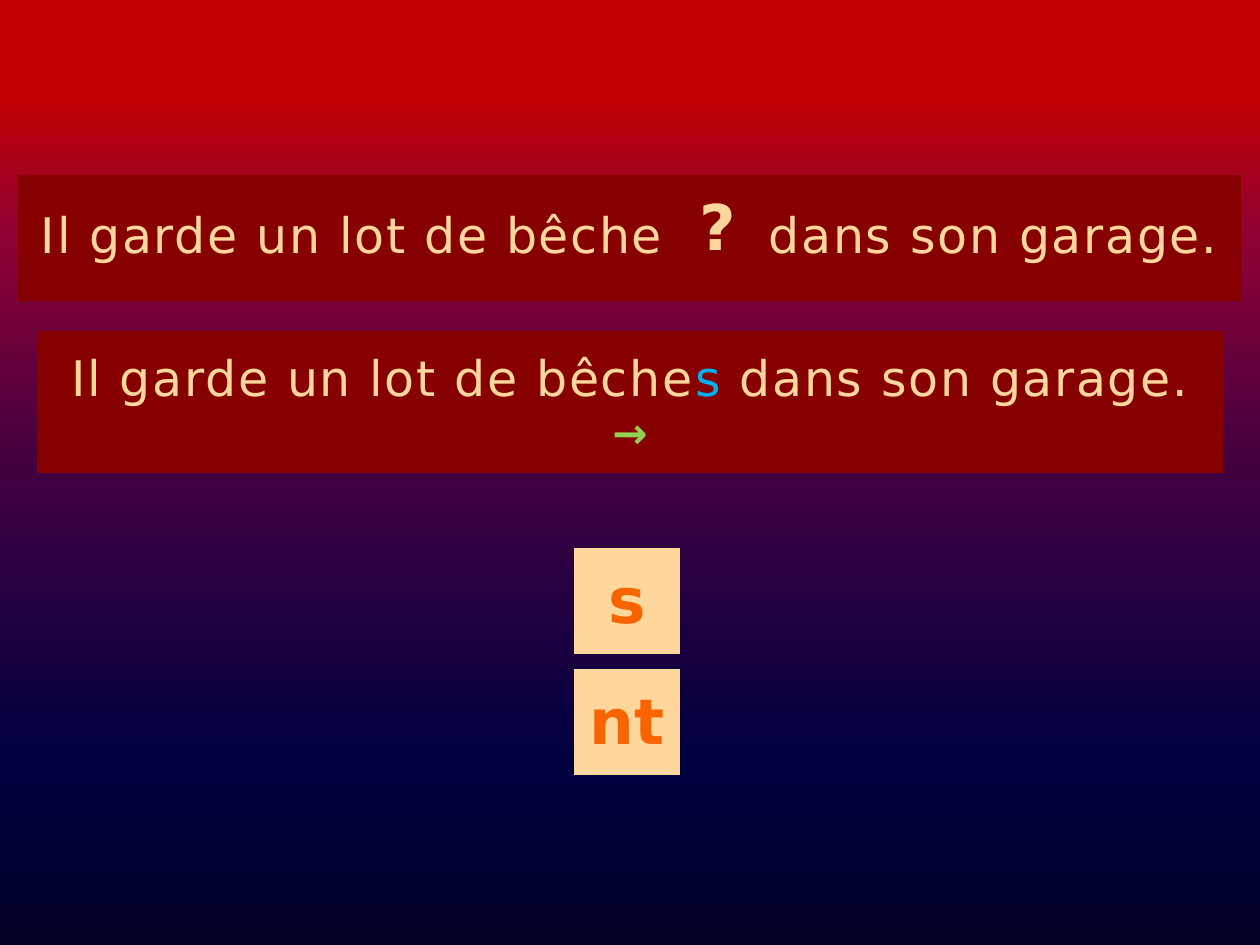
from dataclasses import dataclass
from lxml import etree
from pptx import Presentation, util as u
from pptx.dml.color import RGBColor
from pptx.enum import shapes, text
from pptx.oxml.ns import qn

FONT = "DejaVu Sans"
HUES = {"bar": "860000", "cream": "FFD79D", "orange": "F86400",
        "blue": "00B0F0", "green": "92D050"}
STOPS = {0: "000026", 20: "000040", 50: "400040", 75: "8F0134", 90: "C00000"}


@dataclass
class Box:
    """Place, fill and vertical insets of one block."""
    left: float
    top: float
    width: float
    height: float
    hue: str = "bar"
    above: float = 0.04
    below: float = 0.08


def block(slide, box: Box):
    """Draw a flat block and return it."""
    shape = slide.shapes.add_shape(
        shapes.MSO_SHAPE.ACTION_BUTTON_CUSTOM,
        *map(u.Inches, (box.left, box.top, box.width, box.height)))
    shape.shadow.inherit = False
    shape.line.fill.background()
    shape.fill.solid()
    shape.fill.fore_color.rgb = RGBColor.from_string(HUES[box.hue])
    frame = shape.text_frame
    frame.word_wrap = False
    frame.vertical_anchor = text.MSO_ANCHOR.MIDDLE
    frame.margin_left = frame.margin_right = u.Inches(0.1)
    frame.margin_top, frame.margin_bottom = u.Inches(box.above), u.Inches(box.below)
    frame.paragraphs[0].alignment = text.PP_ALIGN.CENTER
    return shape


def write(para, words: str, size: int = 28, hue: str = "cream",
          bold: bool = False, space: float = 0) -> None:
    """Add one formatted run to a paragraph."""
    run = para.add_run()
    run.text = words
    font = run.font
    font.name, font.size, font.bold = FONT, u.Pt(size), bold
    font.color.rgb = RGBColor.from_string(HUES[hue])
    if space:
        run._r.get_or_add_rPr().set("spc", str(round(space * 100)))


def blend(shape) -> None:
    """Fill a shape with the upward colour blend."""
    shape.fill.gradient()
    shape.fill.gradient_angle = 90
    stops = shape._element.spPr.find(".//" + qn("a:gsLst"))
    for old in list(stops):
        stops.remove(old)
    for place, hue in STOPS.items():
        stop = etree.SubElement(stops, qn("a:gs"), pos=str(place * 1000))
        etree.SubElement(stop, qn("a:srgbClr"), val=hue)


def tile(slide, box: Box, words: str, hue: str) -> None:
    """Draw a block with one large bold mark."""
    para = block(slide, box).text_frame.paragraphs[0]
    write(para, words, size=36, hue=hue, bold=True)


def main() -> None:
    """Build the spelling slide."""
    deck = Presentation()
    deck.slide_width, deck.slide_height = u.Inches(10), u.Inches(7.5)
    slide = deck.slides.add_slide(deck.slide_layouts[6])
    blend(block(slide, Box(0, 0, 10, 7.5)))

    start, end = "Il garde un lot de bêche", "dans son garage."
    ask = block(slide, Box(0.14, 1.39, 9.71, 1, above=0.02))
    para = ask.text_frame.paragraphs[0]
    write(para, start, space=1)
    write(para, " ", space=50.5)
    write(para, end, space=1)
    tile(slide, Box(5.28, 1.39, 0.83, 0.84), "?", "cream")

    for row, words in enumerate(("s", "nt")):
        tile(slide, Box(4.56, 4.35 + 0.96 * row, 0.84, 0.84, "cream"), words, "orange")

    reply = block(slide, Box(0.29, 2.63, 9.42, 1.12, below=0.04)).text_frame
    para = reply.paragraphs[0]
    for words, hue in ((start, "cream"), ("s", "blue"), (" " + end, "cream")):
        write(para, words, hue=hue, space=1)
    para = reply.add_paragraph()
    para.alignment = text.PP_ALIGN.CENTER
    para.space_after = u.Pt(6)
    write(para, "→", size=24, hue="green", bold=True, space=1)
    deck.save("out.pptx")


if __name__ == "__main__":
    main()
